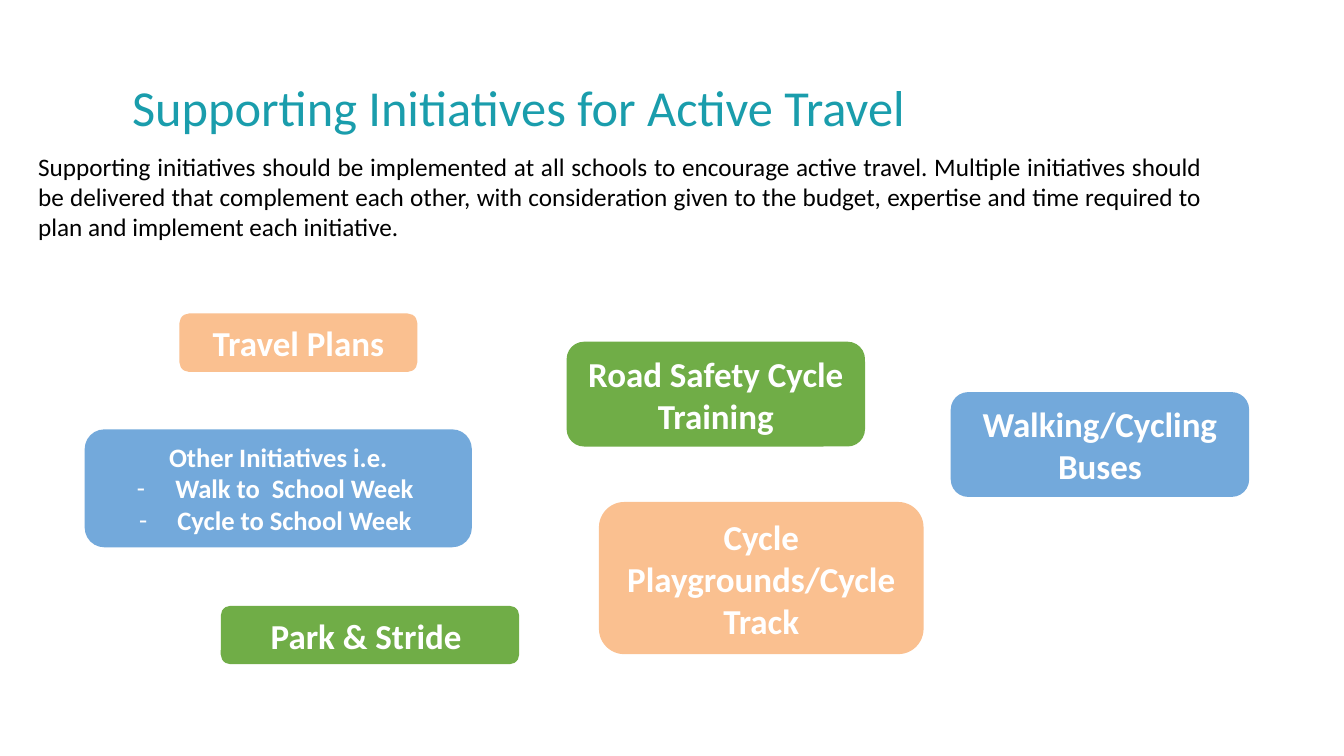
from lxml import etree
from pptx import Presentation
from pptx.dml.color import RGBColor
from pptx.enum.shapes import MSO_SHAPE
from pptx.enum.text import MSO_ANCHOR, MSO_AUTO_SIZE, PP_ALIGN
from pptx.oxml.ns import qn
from pptx.util import Emu, Pt

PX = 9144
FONT = "Calibri"
ROUNDED = MSO_SHAPE.ROUNDED_RECTANGLE
TOP, MIDDLE = MSO_ANCHOR.TOP, MSO_ANCHOR.MIDDLE
NO_FIT = MSO_AUTO_SIZE.NONE
LEFT, CENTER, JUSTIFY = PP_ALIGN.LEFT, PP_ALIGN.CENTER, PP_ALIGN.JUSTIFY
COLORS = {
    "teal": "1A9DAC",
    "black": "000000",
    "white": "FFFFFF",
    "peach": "FAC090",
    "blue": "73A9DB",
    "green": "70AD47",
}
TITLE = "Supporting Initiatives for Active Travel"
INTRODUCTION = (
    "Supporting initiatives should be implemented at all schools to encourage "
    "active travel. Multiple initiatives should be delivered that complement "
    "each other, with consideration given to the budget, expertise and time "
    "required to plan and implement each initiative."
)
INITIATIVES = [
    ((178, 311, 236, 58), "peach", 25, ["Travel Plans"]),
    ((84, 426, 384, 117), "blue", 19,
     ["Other Initiatives i.e.", "Walk to  School Week ", "Cycle to School Week "]),
    ((219, 601, 296, 58), "green", 25, ["Park & Stride "]),
    ((562, 339, 296, 104), "green", 25, ["Road Safety Cycle Training"]),
    ((594, 498, 322, 151), "peach", 25, ["Cycle Playgrounds/Cycle Track"]),
    ((943, 389, 296, 104), "blue", 25, ["Walking/Cycling Buses"]),
]


def px(value):
    return Emu(value * PX)


def color(name):
    return RGBColor.from_string(COLORS[name])


def add_dash(paragraph):
    properties = paragraph._p.get_or_add_pPr()
    properties.set("marL", str(px(38)))
    properties.set("indent", str(px(-38)))
    etree.SubElement(properties, qn("a:buFont")).set("typeface", FONT)
    etree.SubElement(properties, qn("a:buChar")).set("char", "-")


def write_paragraph(paragraph, text, size, color_name, alignment, bold=False):
    paragraph.text = text
    paragraph.alignment = alignment
    paragraph.font.name = FONT
    paragraph.font.size = Pt(size)
    paragraph.font.bold = bold
    paragraph.font.color.rgb = color(color_name)


def set_title(slide):
    title = slide.shapes.title
    title.left, title.top, title.width, title.height = map(px, (131, 75, 900, 111))
    frame = title.text_frame
    frame.margin_left = frame.margin_top = frame.margin_right = frame.margin_bottom = 0
    frame.vertical_anchor = TOP
    frame.auto_size = NO_FIT
    write_paragraph(frame.paragraphs[0], TITLE, 36, "teal", LEFT)


def add_introduction(slide):
    text_box = slide.shapes.add_textbox(*map(px, (28, 145, 1174, 101)))
    frame = text_box.text_frame
    frame.word_wrap = True
    write_paragraph(frame.paragraphs[0], INTRODUCTION, 18, "black", JUSTIFY)


def add_initiative(slide, box, fill_name, size, lines):
    shape = slide.shapes.add_shape(ROUNDED, *map(px, box))
    shape.shadow.inherit = False
    shape.fill.solid()
    shape.fill.fore_color.rgb = color(fill_name)
    shape.line.fill.background()
    frame = shape.text_frame
    frame.word_wrap = True
    frame.vertical_anchor = MIDDLE
    for index, line in enumerate(lines):
        paragraph = frame.add_paragraph() if index else frame.paragraphs[0]
        if index:
            add_dash(paragraph)
        write_paragraph(paragraph, line, size, "white", CENTER, bold=True)


def main():
    presentation = Presentation()
    presentation.slide_width, presentation.slide_height = px(1333), px(750)
    slide = presentation.slides.add_slide(presentation.slide_layouts[5])
    set_title(slide)
    add_introduction(slide)
    for initiative in INITIATIVES:
        add_initiative(slide, *initiative)
    presentation.save("out.pptx")


if __name__ == "__main__":
    main()
